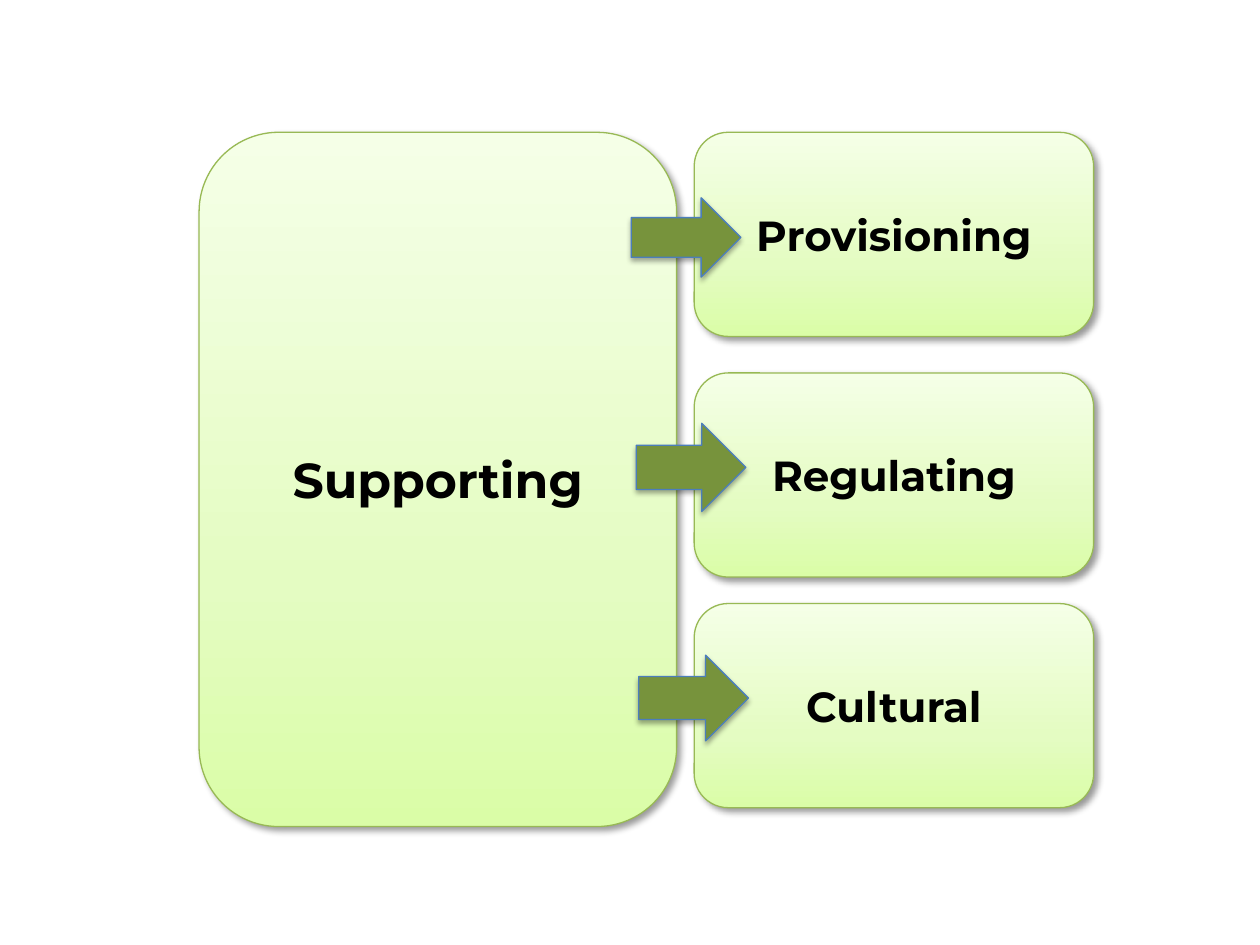
from copy import deepcopy

from lxml import etree
from pptx import Presentation
from pptx.dml.color import RGBColor
from pptx.enum import shapes, text
from pptx.oxml.ns import qn
from pptx.util import Inches, Pt

BLACK = RGBColor(0x00, 0x00, 0x00)
BOX_LINE = RGBColor(0x98, 0xB9, 0x55)
ARROW_FILL = RGBColor(0x77, 0x93, 0x3C)
ARROW_LINE = RGBColor(0x4B, 0x7E, 0xBC)
GRADIENT = [
    (0, RGBColor(0xDA, 0xFD, 0xA7)),
    (0.35, RGBColor(0xE4, 0xFC, 0xC2)),
    (1, RGBColor(0xF5, 0xFF, 0xE7)),
]


def add_shadow(shape, opacity, blur, distance, angle):
    """Cast a black shadow: opacity in percent, lengths in points, angle in degrees."""
    shape.shadow.inherit = False
    effects = shape._element.spPr.find(qn("a:effectLst"))
    shadow = etree.SubElement(
        effects, qn("a:outerShdw"), blurRad=str(Pt(blur)), dist=str(Pt(distance)),
        dir=str(angle * 60000), algn="ctr", rotWithShape="0")
    color = etree.SubElement(shadow, qn("a:srgbClr"), val=str(BLACK))
    etree.SubElement(color, qn("a:alpha"), val=str(opacity * 1000))


prs = Presentation()
prs.slide_width, prs.slide_height = Inches(10), Inches(7.5)
slide = prs.slides.add_slide(prs.slide_layouts[6])

services = [
    ("Supporting", 28, 1.58, 1.05, 3.79, 5.51),
    ("Provisioning", 24, 5.51, 1.05, 3.17, 1.62),
    ("Regulating", 24, 5.51, 2.96, 3.17, 1.62),
    ("Cultural", 24, 5.51, 4.79, 3.17, 1.62),
]
for label, size, *bounds in services:
    box = slide.shapes.add_shape(
        shapes.MSO_SHAPE.ROUNDED_RECTANGLE, *map(Inches, bounds))
    box.fill.gradient()
    box.fill.gradient_angle = 90
    stop_list = box._element.spPr.find(".//" + qn("a:gsLst"))
    stop_list.insert(1, deepcopy(stop_list[0]))
    for stop, (position, color) in zip(box.fill.gradient_stops, GRADIENT):
        stop.position = position
        stop.color.rgb = color
    box.line.color.rgb = BOX_LINE
    box.line.width = Pt(0.75)
    add_shadow(box, 40, 4, 3, 45)

    frame = box.text_frame
    frame.text = label
    frame.word_wrap = True
    frame.vertical_anchor = text.MSO_ANCHOR.MIDDLE
    paragraph = frame.paragraphs[0]
    paragraph.alignment = text.PP_ALIGN.CENTER
    font = paragraph.runs[0].font
    font.name, font.size, font.bold = "Montserrat", Pt(size), True
    font.color.rgb = BLACK

for left, top, height in [(5.01, 1.57, 0.63), (5.05, 3.36, 0.7), (5.07, 5.2, 0.68)]:
    arrow = slide.shapes.add_shape(
        shapes.MSO_SHAPE.RIGHT_ARROW,
        Inches(left), Inches(top), Inches(0.87), Inches(height))
    arrow.fill.solid()
    arrow.fill.fore_color.rgb = ARROW_FILL
    arrow.line.color.rgb = ARROW_LINE
    arrow.line.width = Pt(0.75)
    add_shadow(arrow, 35, 3.1, 1.8, 90)

prs.save("out.pptx")
